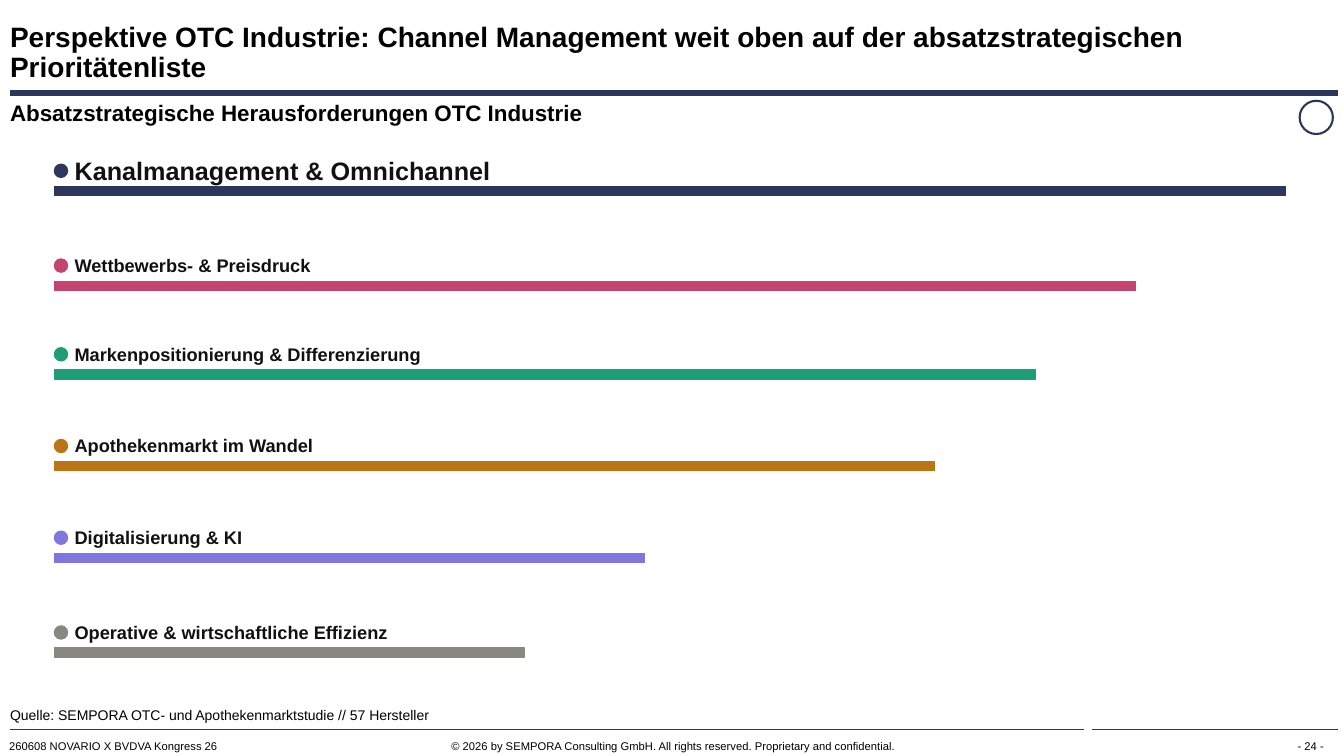
from lxml import etree
from pptx import Presentation
from pptx.dml.color import RGBColor
from pptx.enum.shapes import MSO_CONNECTOR, MSO_SHAPE
from pptx.enum.text import MSO_ANCHOR, PP_ALIGN
from pptx.oxml.ns import qn
from pptx.util import Inches, Pt

NAVY = RGBColor(0x2C, 0x37, 0x5C)
PINK = RGBColor(0xC4, 0x44, 0x6E)
GREEN = RGBColor(0x1D, 0x9E, 0x75)
OCHRE = RGBColor(0xBA, 0x75, 0x17)
VIOLET = RGBColor(0x7F, 0x77, 0xDD)
GREY = RGBColor(0x88, 0x87, 0x80)
INK = RGBColor(0x11, 0x11, 0x11)
BLACK = RGBColor(0, 0, 0)
WHITE = RGBColor(0xFF, 0xFF, 0xFF)

# Label, colour, dot top, bar length, label size
CHALLENGES = [
    ("Kanalmanagement & Omnichannel", NAVY, 1.63, 12.21, 18),
    ("Wettbewerbs- & Preisdruck", PINK, 2.57, 10.72, 13),
    ("Markenpositionierung & Differenzierung", GREEN, 3.45, 9.73, 13),
    ("Apothekenmarkt im Wandel", OCHRE, 4.36, 8.73, 13),
    ("Digitalisierung & KI", VIOLET, 5.27, 5.85, 13),
    ("Operative & wirtschaftliche Effizienz", GREY, 6.21, 4.66, 13),
]


class SlideBuilder:
    font = "Arial"

    def __init__(self, slide):
        self.shapes = slide.shapes

    def text(self, box, text, size, color=BLACK, bold=False, align=PP_ALIGN.LEFT,
             anchor=MSO_ANCHOR.TOP, spacing=None, wrap=True):
        sp = self.shapes.add_textbox(*map(Inches, box))
        tf = sp.text_frame
        tf.margin_left = tf.margin_right = tf.margin_top = tf.margin_bottom = 0
        tf.word_wrap = wrap
        tf.vertical_anchor = anchor
        p = tf.paragraphs[0]
        p.text = text
        p.alignment = align
        p.line_spacing = spacing
        p.font.name = self.font
        p.font.size = Pt(size)
        p.font.bold = bold
        p.font.color.rgb = color

    def shape(self, kind, box, fill=None, line=None, width=1):
        sp = self.shapes.add_shape(kind, *map(Inches, box))
        sp.shadow.inherit = False
        if fill is None:
            sp.fill.background()
        else:
            sp.fill.solid()
            sp.fill.fore_color.rgb = fill
        if line is None:
            sp.line.fill.background()
        else:
            sp.line.color.rgb = line
            sp.line.width = Pt(width)

    def rule(self, y, width):
        line = self.shapes.add_connector(
            MSO_CONNECTOR.STRAIGHT, Inches(0.1), Inches(y), Inches(13.27), Inches(y))
        line.line.color.rgb = NAVY
        line.line.width = Pt(width)
        etree.SubElement(line._element.spPr, qn("a:effectLst"))

    def challenge(self, label, color, top, length, size):
        self.shape(MSO_SHAPE.OVAL, (0.54, top, 0.13, 0.13), color, color)
        self.text((0.74, top - 0.08, 4.47, 0.28), label, size, INK, bold=True,
                  anchor=MSO_ANCHOR.MIDDLE)
        self.shape(MSO_SHAPE.RECTANGLE, (0.54, top + 0.22, length, 0.09), color, color)


def main():
    prs = Presentation()
    prs.slide_width, prs.slide_height = Inches(13.33), Inches(7.5)
    s = SlideBuilder(prs.slides.add_slide(prs.slide_layouts[6]))

    # Rules, with a gap in the lower one
    s.rule(7.24, 0.75)
    s.shape(MSO_SHAPE.RECTANGLE, (10.75, 7.06, 0.08, 0.37), WHITE)
    s.rule(0.92, 4)

    # Title and subtitle
    s.text((0.1, 0.23, 12.13, 0.6),
           "Perspektive OTC Industrie: Channel Management weit oben auf der "
           "absatzstrategischen Prioritätenliste",
           20, bold=True, anchor=MSO_ANCHOR.BOTTOM, spacing=0.9)
    s.text((0.1, 1, 13.12, 0.27), "Absatzstrategische Herausforderungen OTC Industrie",
           16, bold=True, anchor=MSO_ANCHOR.MIDDLE, spacing=0.9)
    s.shape(MSO_SHAPE.OVAL, (12.89, 1, 0.33, 0.33), line=NAVY, width=1.5)

    # Ranked challenges
    for row in CHALLENGES:
        s.challenge(*row)

    # Source and footer
    s.text((0.1, 6.92, 8.82, 0.26),
           "Quelle: SEMPORA OTC- und Apothekenmarktstudie // 57 Hersteller",
           10, anchor=MSO_ANCHOR.BOTTOM)
    s.text((0.09, 7.33, 3.29, 0.24), "260608 NOVARIO X BVDVA Kongress 26", 8, wrap=False)
    s.text((3.39, 7.33, 6.58, 0.14),
           "© 2026 by SEMPORA Consulting GmbH. All rights reserved. "
           "Proprietary and confidential.", 8, align=PP_ALIGN.CENTER)
    s.text((11.28, 7.33, 1.85, 0.14), "- 24 -", 8, align=PP_ALIGN.RIGHT)

    prs.save("out.pptx")


if __name__ == "__main__":
    main()
